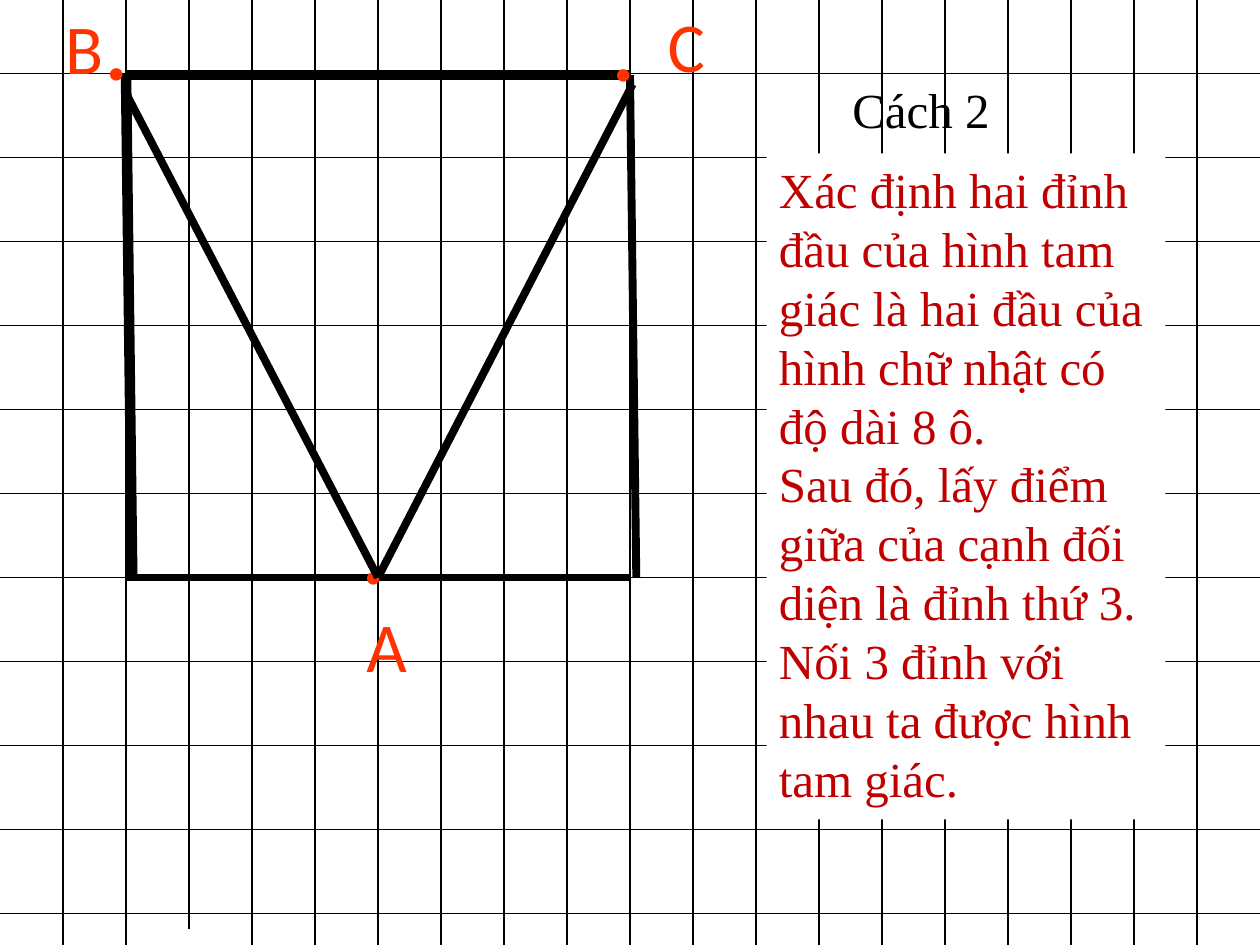
import pptx
import pptx.dml.color
import pptx.enum.shapes
import pptx.enum.text
import pptx.oxml.ns
import pptx.util
from lxml import etree

Pt = pptx.util.Pt
WIDTH, HEIGHT = 720, 540
COLUMN, ROW, FIRST_ROW = 36, 48, 42
BLACK, ORANGE, RED, WHITE = "000000", "FF3300", "C00000", "FFFFFF"
SERIF, SANS = "Times New Roman", "Calibri"


def color(hex_code):
    return pptx.dml.color.RGBColor.from_string(hex_code)


def add_line(slide, start, end, weight):
    line = slide.shapes.add_connector(
        pptx.enum.shapes.MSO_CONNECTOR.STRAIGHT,
        Pt(start[0]), Pt(start[1]), Pt(end[0]), Pt(end[1]))
    line.line.color.rgb = color(BLACK)
    line.line.width = Pt(weight)
    etree.SubElement(line._element.spPr, pptx.oxml.ns.qn("a:effectLst"))


def add_text(slide, box, paragraphs, size, font, hex_code, wrap=True, bold=False):
    label = slide.shapes.add_textbox(*map(Pt, box))
    frame = label.text_frame
    frame.text = "\n".join(paragraphs)
    frame.word_wrap = wrap
    frame.auto_size = pptx.enum.text.MSO_AUTO_SIZE.SHAPE_TO_FIT_TEXT
    for paragraph in frame.paragraphs:
        paragraph.font.size = Pt(size)
        paragraph.font.name = font
        paragraph.font.bold = bold
        paragraph.font.color.rgb = color(hex_code)
    return label


def add_grid(slide):
    for x in range(COLUMN, WIDTH, COLUMN):
        bottom = 531 if x == 3 * COLUMN else HEIGHT
        add_line(slide, (x, 0), (x, bottom), 0.75)
    for y in range(FIRST_ROW, HEIGHT, ROW):
        add_line(slide, (0, y), (WIDTH, y), 0.75)


def add_vertex(slide, letter, dot_corner, letter_corner):
    add_text(slide, (*dot_corner, 31.5, 65), ["."], 48, SANS, ORANGE, wrap=False, bold=True)
    add_text(slide, (*letter_corner, 42, 55.5), [letter], 40, SANS, ORANGE, wrap=False)


def add_instructions(slide):
    panel = add_text(slide, (438, 87.7, 228, 380.5), [
        "Xác định hai đỉnh đầu của hình tam giác là hai đầu của hình chữ nhật có độ dài 8 ô.",
        "Sau đó, lấy điểm giữa của cạnh đối diện là đỉnh thứ 3. "
        "Nối 3 đỉnh với nhau ta được hình tam giác.",
    ], 28, SERIF, RED)
    panel.fill.solid()
    panel.fill.fore_color.rgb = color(WHITE)


def main():
    deck = pptx.Presentation()
    deck.slide_width, deck.slide_height = Pt(WIDTH), Pt(HEIGHT)
    slide = deck.slides.add_slide(deck.slide_layouts[6])

    add_grid(slide)
    rectangle_sides = [
        ((72, 42), (75.6, 330), 6),
        ((72, 43), (360, 43), 6),
        ((360, 43), (363.6, 330), 4.5),
        ((72, 330), (360, 330), 4.5),
    ]
    for side in rectangle_sides:
        add_line(slide, *side)

    add_vertex(slide, "B", (53.3, -5.8), (30.2, -0.7))
    add_vertex(slide, "C", (342.7, -5), (374.4, -2.2))
    add_vertex(slide, "A", (200.2, 282.2), (202.3, 340.6))

    apex = (216, 330)
    for corner in [(72, 53.3), (361.5, 48.2)]:
        add_line(slide, corner, apex, 4.5)

    add_text(slide, (480, 42, 126, 41), ["Cách 2"], 28, SERIF, BLACK)
    add_instructions(slide)

    deck.save("out.pptx")


if __name__ == "__main__":
    main()
